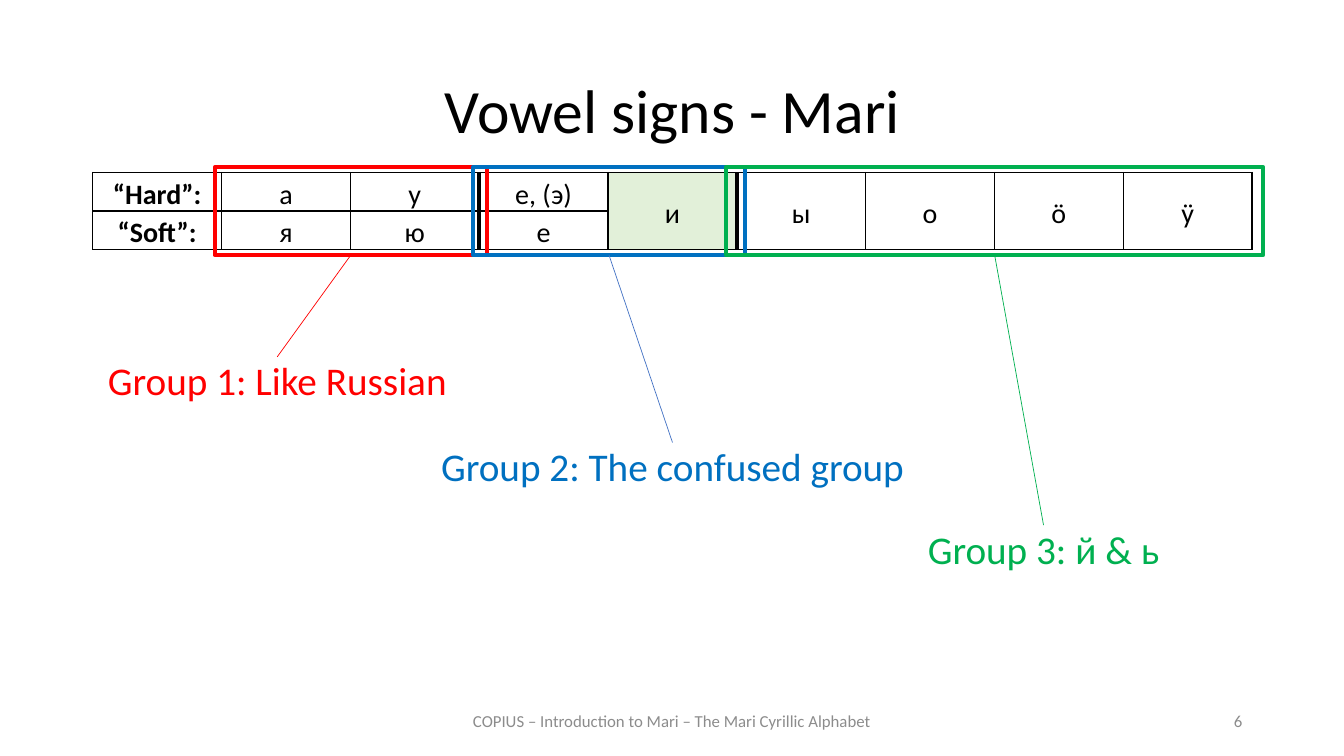
from pptx import Presentation
from pptx.dml.color import RGBColor
from pptx.enum.shapes import MSO_CONNECTOR, MSO_SHAPE
from pptx.enum.text import MSO_ANCHOR, PP_ALIGN
from pptx.oxml.ns import qn
from pptx.util import Inches, Pt
from lxml import etree

CENTER, RIGHT = PP_ALIGN.CENTER, PP_ALIGN.RIGHT
TOP, MIDDLE = MSO_ANCHOR.TOP, MSO_ANCHOR.MIDDLE
STRAIGHT, RECTANGLE = MSO_CONNECTOR.STRAIGHT, MSO_SHAPE.RECTANGLE
BOTTOM_SITE, TOP_SITE = 2, 0

THEME = {
    "font": "Calibri",
    "black": "000000", "grey": "8C8C8C", "pale": "E2F0D9",
    "red": "FF0000", "blue": "0070C0", "green": "00B050", "thin_blue": "4472C4",
    "title": 44, "label": 28, "cell": 20, "footer": 12,
    "frame": 3, "leader": 0.5, "rule": 1, "thick_rule": 3,
}

TITLE = "Vowel signs - Mari"
FOOTER = "COPIUS – Introduction to Mari – The Mari Cyrillic Alphabet"
PAGE_NUMBER = "6"
VOWELS = [
    ("“Hard”:", "“Soft”:"), ("а", "я"), ("у", "ю"), ("е, (э)", "е"),
    ("и",), ("ы",), ("о",), ("ӧ",), ("ӱ",),
]
SHADED_COLUMN = 4
THICK_AFTER = {2, 4}
GROUPS = [
    {"label": "Group 1: Like Russian", "color": "red", "leader": "red",
     "frame": (2.13, 2.7), "place": (0.92, 3.54, 3.66)},
    {"label": "Group 2: The confused group", "color": "blue", "leader": "thin_blue",
     "frame": (4.69, 2.7), "place": (4.23, 4.39, 4.88)},
    {"label": "Group 3: й & ь", "color": "green", "leader": "green",
     "frame": (7.2, 5.33), "place": (7.91, 5.21, 4.88)},
]

WIDTH, HEIGHT = 13.33, 7.5
MARGIN = 0.92
CONTENT = 11.5
TABLE_TOP, ROW_HEIGHT = 1.71, 0.36
FRAME_TOP, FRAME_HEIGHT = 1.66, 0.87
LABEL_HEIGHT = 0.58
FOOTER_TOP, FOOTER_HEIGHT = 6.95, 0.4
FOOTER_WIDTH, NUMBER_WIDTH = 4.5, 3


def color(name):
    return RGBColor.from_string(THEME[name])


def apply(target, values):
    for name, value in values.items():
        setattr(target, name, value)


def write(frame, text, size, ink="black", bold=False, **layout):
    para = frame.paragraphs[0]
    apply(para, {"alignment": CENTER, **layout})
    span = para.add_run()
    span.text = text
    apply(span.font, {"name": THEME["font"], "size": Pt(THEME[size]), "bold": bold})
    span.font.color.rgb = color(ink)


def add_text(page, place, text, size, ink="black", anchor=MIDDLE, **layout):
    box = page.shapes.add_textbox(*map(Inches, place))
    apply(box.text_frame, {"word_wrap": True, "vertical_anchor": anchor})
    write(box.text_frame, text, size, ink, **layout)
    return box


def set_borders(cell, widths):
    properties = cell._tc.get_or_add_tcPr()
    for index, (side, width) in enumerate(widths.items()):
        line = etree.Element(qn(f"a:ln{side}"), w=str(Pt(width)))
        fill = etree.SubElement(line, qn("a:solidFill"))
        etree.SubElement(fill, qn("a:srgbClr"), val=THEME["black"])
        properties.insert(index, line)


def add_vowel_table(page):
    rows, columns = 2, len(VOWELS)
    place = (MARGIN, TABLE_TOP, CONTENT, rows * ROW_HEIGHT)
    table = page.shapes.add_table(rows, columns, *map(Inches, place)).table
    apply(table, {"first_row": False, "horz_banding": False})
    thin, thick = THEME["rule"], THEME["thick_rule"]
    for column, signs in enumerate(VOWELS):
        table.columns[column].width = Inches(CONTENT / columns)
        widths = {
            "L": thick if column - 1 in THICK_AFTER else thin,
            "R": thick if column in THICK_AFTER else thin,
            "T": thin, "B": thin,
        }
        for row in range(rows):
            cell = table.cell(row, column)
            apply(cell, {"vertical_anchor": MIDDLE, "margin_top": 0, "margin_bottom": 0,
                         "margin_left": Inches(0.07), "margin_right": Inches(0.07)})
            if column == SHADED_COLUMN:
                cell.fill.solid()
                cell.fill.fore_color.rgb = color("pale")
            else:
                cell.fill.background()
            set_borders(cell, widths)
            if row < len(signs):
                write(cell.text_frame, signs[row], "cell", bold=column == 0, line_spacing=1.15)
        if len(signs) == 1:
            table.cell(0, column).merge(table.cell(rows - 1, column))


def add_group(page, group):
    left, width = group["frame"]
    frame = page.shapes.add_shape(
        RECTANGLE, *map(Inches, (left, FRAME_TOP, width, FRAME_HEIGHT)))
    frame.shadow.inherit = False
    frame.fill.background()
    frame.line.color.rgb = color(group["color"])
    frame.line.width = Pt(THEME["frame"])

    label = add_text(page, (*group["place"], LABEL_HEIGHT), group["label"], "label",
                     group["color"], TOP, line_spacing=0.9, space_before=Pt(10))

    leader = page.shapes.add_connector(STRAIGHT, 0, 0, 0, 0)
    leader.begin_connect(frame, BOTTOM_SITE)
    leader.end_connect(label, TOP_SITE)
    leader.line.color.rgb = color(group["leader"])
    leader.line.width = Pt(THEME["leader"])
    etree.SubElement(leader._element.spPr, qn("a:effectLst"))


def main():
    deck = Presentation()
    apply(deck, {"slide_width": Inches(WIDTH), "slide_height": Inches(HEIGHT)})
    page = deck.slides.add_slide(deck.slide_layouts[6])

    add_text(page, (MARGIN, 0.4, CONTENT, 1.45), TITLE, "title", line_spacing=0.9)
    add_vowel_table(page)
    for group in GROUPS:
        add_group(page, group)
    add_text(page, ((WIDTH - FOOTER_WIDTH) / 2, FOOTER_TOP, FOOTER_WIDTH, FOOTER_HEIGHT),
             FOOTER, "footer", "grey")
    add_text(page, (MARGIN + CONTENT - NUMBER_WIDTH, FOOTER_TOP, NUMBER_WIDTH, FOOTER_HEIGHT),
             PAGE_NUMBER, "footer", "grey", alignment=RIGHT)
    deck.save("out.pptx")


if __name__ == "__main__":
    main()
